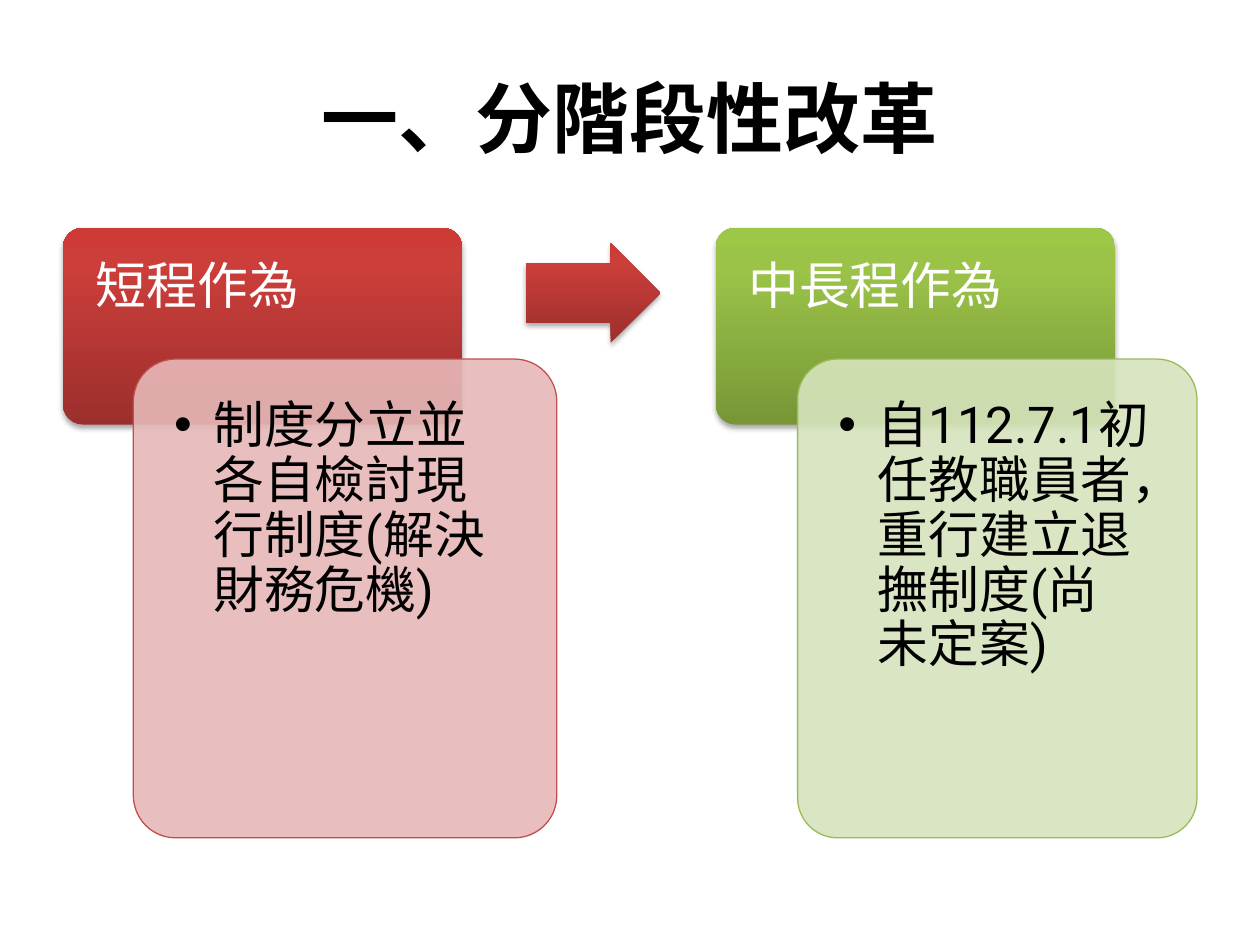
import pptx
import pptx.dml.color
import pptx.enum.shapes
import pptx.enum.text
import pptx.oxml
import pptx.oxml.ns
import pptx.util

Pt = pptx.util.Pt
RGB = pptx.dml.color.RGBColor.from_string
SHAPES = pptx.enum.shapes.MSO_SHAPE
ANCHOR = pptx.enum.text.MSO_ANCHOR
ALIGN = pptx.enum.text.PP_ALIGN
NAMESPACE = pptx.oxml.ns.nsdecls("a")

COLOURS = {
    "black": "000000", "white": "FFFFFF",
    "red_line": "C0504D", "red_pale": "E6B9B8",
    "green_line": "9BBB59", "green_pale": "D7E4BD",
}
# Stops run from the bottom edge to the top edge
GRADIENTS = {
    "red": {0: "9C2F2D", 80: "CB3E3A", 100: "CE3B37"},
    "green": {0: "779737", 80: "9BC348", 100: "9DC746"},
}
SHADOW = (
    f'<a:effectLst {NAMESPACE}><a:outerShdw blurRad="{Pt(3.1)}" dist="{Pt(1.8)}" '
    f'dir="5400000" rotWithShape="0"><a:srgbClr val="{COLOURS["black"]}">'
    '<a:alpha val="35000"/></a:srgbClr></a:outerShdw></a:effectLst>'
)

presentation = pptx.Presentation()
presentation.slide_width, presentation.slide_height = Pt(720), Pt(540)
slide = presentation.slides.add_slide(presentation.slide_layouts[6])


def add_shape(kind, box, adjustments, gradient=None, fill=None, line=None):
    """Add a shaded shape with a shadow, or a translucent outlined one."""
    shape = slide.shapes.add_shape(kind, *map(Pt, box))
    for index, value in enumerate(adjustments):
        shape.adjustments[index] = value
    shape.shadow.inherit = False
    properties = shape.fill._xPr
    if gradient:
        shape.line.fill.background()
        stops = "".join(
            f'<a:gs pos="{position * 1000}"><a:srgbClr val="{colour}"/></a:gs>'
            for position, colour in GRADIENTS[gradient].items())
        properties.prstGeom.addnext(pptx.oxml.parse_xml(
            f'<a:gradFill {NAMESPACE} rotWithShape="1"><a:gsLst>{stops}</a:gsLst>'
            '<a:lin ang="16200000" scaled="0"/></a:gradFill>'))
        effects = properties.find(pptx.oxml.ns.qn("a:effectLst"))
        properties.replace(effects, pptx.oxml.parse_xml(SHADOW))
    else:
        shape.fill.solid()
        shape.fill.fore_color.rgb = RGB(COLOURS[fill])
        colour = properties.find(".//" + pptx.oxml.ns.qn("a:srgbClr"))
        colour.append(pptx.oxml.parse_xml(f'<a:alpha {NAMESPACE} val="90000"/>'))
        shape.line.color.rgb = RGB(COLOURS[line])
        shape.line.width = Pt(0.75)


def add_text(box, text, colour, frame_format, paragraph_format, font_format, bullet=False):
    """Add a wrapped text box with one paragraph."""
    frame = slide.shapes.add_textbox(*map(Pt, box)).text_frame
    paragraph = frame.paragraphs[0]
    if bullet:
        properties = paragraph._p.get_or_add_pPr()
        properties.set("marL", str(Pt(22.5)))
        properties.set("indent", str(Pt(-22.5)))
        for element in ('buFont {} typeface="Arial"', 'buChar {} char="•"'):
            properties.append(pptx.oxml.parse_xml(f"<a:{element.format(NAMESPACE)}/>"))
    run = paragraph.add_run()
    run.text = text
    run.font.color.rgb = RGB(COLOURS[colour])
    for target, values in ((frame, frame_format), (paragraph, paragraph_format),
                           (run.font, font_format)):
        for name, value in values.items():
            setattr(target, name, value)


inset = Pt(16.5)
header_frame = {"word_wrap": True, "vertical_anchor": ANCHOR.TOP, "margin_left": inset,
                "margin_top": inset, "margin_right": inset, "margin_bottom": Pt(8.8)}
body_frame = {**header_frame, "margin_bottom": inset}
stage_paragraph = {"line_spacing": 0.9, "alignment": ALIGN.LEFT}
stage_font = {"size": Pt(29), "name": "Roboto"}

# Title
add_text((36, 21.6, 648, 90), "一、分階段性改革", "black",
         {"word_wrap": True, "vertical_anchor": ANCHOR.MIDDLE},
         {"alignment": ALIGN.CENTER},
         {"size": Pt(44), "name": "Arial", "bold": True})

# Two stages: header card, overlapping detail card
stages = [
    ("red", 36, "短程作為", 76.2, 242, "制度分立並各自檢討現行制度(解決財務危機)"),
    ("green", 409, "中長程作為", 455.8, 228.2,
     "自112.7.1初任教職員者，重行建立退 撫制度(尚 未定案)"),
]
for theme, header_left, header, body_left, body_width, body in stages:
    add_shape(SHAPES.ROUNDED_RECTANGLE, (header_left, 130.2, 228.2, 112.4), [0.1],
              gradient=theme)
    add_text((header_left + 2.2, 132.4, 223.4, 70.6), header, "white",
             header_frame, stage_paragraph, stage_font)
    add_shape(SHAPES.ROUNDED_RECTANGLE, (body_left, 205.2, body_width, 273.6), [0.1],
              fill=f"{theme}_pale", line=f"{theme}_line")
    add_text((body_left + 6.8, 212, body_width - 13.6, 260), body, "black",
             body_frame, stage_paragraph, stage_font, bullet=True)

# Arrow between the stages
add_shape(SHAPES.RIGHT_ARROW, (300.4, 139, 77, 56.8), [0.6, 0.5], gradient="red")

presentation.save("out.pptx")
